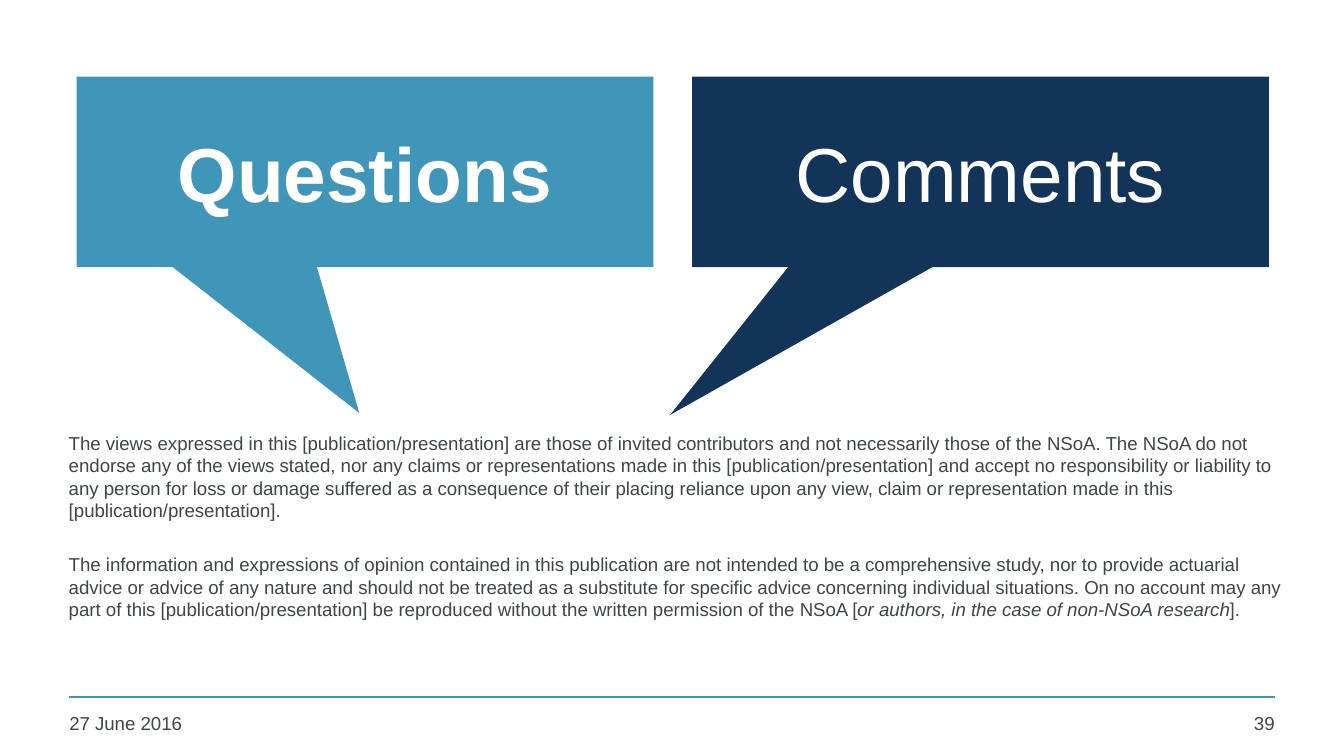
from pptx import Presentation
from pptx.dml.color import RGBColor
from pptx.enum.shapes import MSO_CONNECTOR, MSO_SHAPE
from pptx.enum.text import MSO_ANCHOR, PP_ALIGN
from pptx.oxml.ns import qn
from pptx.util import Cm, Pt
from lxml import etree

TEAL = RGBColor(0x40, 0x96, 0xB8)
NAVY = RGBColor(0x11, 0x34, 0x58)
GREY = RGBColor(0x3F, 0x45, 0x48)
WHITE = RGBColor(0xFF, 0xFF, 0xFF)

# Each paragraph is a list of (text, italic) spans
DISCLAIMER = [
    [("The views expressed in this [publication/presentation] are those of invited "
      "contributors and not necessarily those of the NSoA. The NSoA do not endorse any "
      "of the views stated, nor any claims or representations made in this "
      "[publication/presentation] and accept no responsibility or liability to any "
      "person for loss or damage suffered as a consequence of their placing reliance "
      "upon any view, claim or representation made in this "
      "[publication/presentation].", False)],
    [("The information and expressions of opinion contained in this publication are not "
      "intended to be a comprehensive study, nor to provide actuarial advice or advice "
      "of any nature and should not be treated as a substitute for specific advice "
      "concerning individual situations. On no account may any part of this "
      "[publication/presentation] be reproduced without the written permission of the "
      "NSoA [", False),
     ("or authors, in the case of non-NSoA research", True),
     ("].", False)],
]


def add_text(page, box, paragraphs, size=10, color=GREY, bold=False,
             align=PP_ALIGN.LEFT, anchor=MSO_ANCHOR.TOP, gap=0):
    """Place paragraphs in a box given as left, top, width, height in cm."""
    frame = page.shapes.add_textbox(*map(Cm, box)).text_frame
    frame.word_wrap = True
    frame.vertical_anchor = anchor
    frame.margin_left = frame.margin_right = Cm(0.23)
    frame.margin_top = frame.margin_bottom = Cm(0.11)
    for index, spans in enumerate(paragraphs):
        para = frame.add_paragraph() if index else frame.paragraphs[0]
        para.alignment = align
        para.space_before = Pt(gap if index else 0)
        para.font.name, para.font.size = "Arial", Pt(size)
        para.font.bold = bold
        para.font.color.rgb = color
        for text, italic in spans:
            span = para.add_run()
            span.text = text
            if italic:
                span.font.italic = True


def add_callout(page, box, label, color, tail, bold=False):
    """Speech bubble with a centred label; tail is its tip relative to the centre."""
    bubble = page.shapes.add_shape(MSO_SHAPE.RECTANGULAR_CALLOUT, *map(Cm, box))
    bubble.shadow.inherit = False
    bubble.fill.solid()
    bubble.fill.fore_color.rgb = color
    bubble.line.fill.background()
    bubble.adjustments[0], bubble.adjustments[1] = tail
    left, top, width, height = box
    inset_x, inset_y = 0.55, 0.6
    label_box = (left + inset_x, top + inset_y, width - 2 * inset_x, height - 2 * inset_y)
    add_text(page, label_box, [[(label, False)]], 41, WHITE, bold,
             PP_ALIGN.CENTER, MSO_ANCHOR.MIDDLE)


def add_footer(page, box, date, number):
    """Rule with the date at its left end and the page number at its right end."""
    left, top, width, height = box
    rule = page.shapes.add_connector(MSO_CONNECTOR.STRAIGHT, Cm(left), Cm(top),
                                     Cm(left + width), Cm(top))
    rule.line.color.rgb = TEAL
    rule.line.width = Pt(1)
    etree.SubElement(rule._element.spPr, qn("a:effectLst"))
    text_top, overhang, number_width = top + 0.16, 0.22, 1.8
    add_text(page, (left - overhang, text_top, 5.6, height), [[(date, False)]])
    add_text(page, (left + width + overhang - number_width, text_top, number_width, height),
             [[(number, False)]], align=PP_ALIGN.RIGHT)


def main():
    deck = Presentation()
    deck.slide_width, deck.slide_height = Cm(25.4), Cm(14.29)
    page = deck.slides.add_slide(deck.slide_layouts[6])

    # Footer
    add_footer(page, (1.3, 13.18, 22.8, 0.7), "27 June 2016", "39")

    # Two speech bubbles
    add_callout(page, (1.45, 1.45, 10.9, 3.6), "Questions", TEAL, (-0.01, 1.266), bold=True)
    add_callout(page, (13.08, 1.45, 10.9, 3.6), "Comments", NAVY, (-0.538, 1.276))

    # Disclaimer
    add_text(page, (1.07, 8.05, 23.4, 5.05), DISCLAIMER, gap=17)

    deck.save("out.pptx")


if __name__ == "__main__":
    main()
